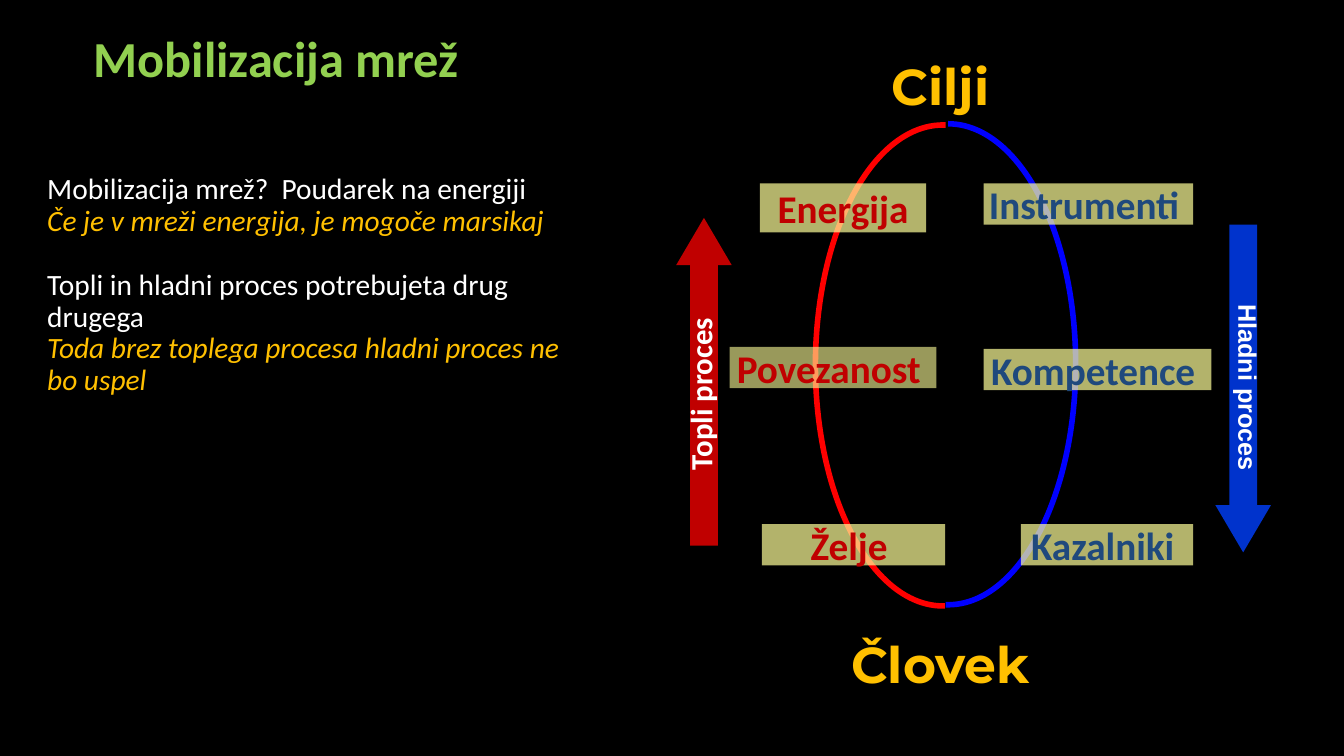
from dataclasses import dataclass

from lxml.etree import SubElement
from pptx import Presentation
from pptx.dml.color import RGBColor
from pptx.enum.shapes import MSO_SHAPE
from pptx.enum.text import MSO_ANCHOR, PP_ALIGN
from pptx.oxml.ns import qn
from pptx.shapes.autoshape import Shape
from pptx.slide import Slide
from pptx.util import Cm, Pt

COLORS = {
    "background": "000000", "title": "92D050", "white": "FFFFFF",
    "gold": "FFC000", "warm": "C00000", "cold": "1F497D",
    "warm_arc": "FF0000", "cold_arc": "0000FF",
    "cold_arrow": "0033CC", "label": "FFFF99",
}


@dataclass(frozen=True)
class Area:
    left: float
    top: float
    width: float
    height: float

    def lengths(self) -> list[Cm]:
        return [Cm(value) for value in (self.left, self.top, self.width, self.height)]


@dataclass(frozen=True)
class Arc:
    area: Area
    color: str
    angles: tuple[float, float]


@dataclass(frozen=True)
class Process:
    text: str
    arrow: Area
    arrow_rotation: int
    color: str
    caption: Area
    caption_rotation: int
    size: int
    font: str


@dataclass(frozen=True)
class Label:
    text: str
    area: Area
    color: str
    opacity: int = 70


@dataclass(frozen=True)
class Heading:
    text: str
    area: Area


@dataclass(frozen=True)
class Line:
    text: str
    color: str = "white"
    italic: bool = False
    space_before: int = 0


ARCS = [
    Arc(Area(20.68, 3.12, 6.43, 12.12), "cold_arc", (162, 54.36)),
    Arc(Area(20.55, 3.15, 6.43, 12.12), "warm_arc", (53.72, 162.38)),
]
PROCESSES = [
    Process("Topli proces", Area(17.04, 5.49, 1.4, 8.26), 180, "warm",
            Area(14.45, 9.27, 6.53, 1.32), 270, 22, "Calibri"),
    Process("Hladni proces", Area(30.63, 5.66, 1.4, 8.26), 0, "cold_arrow",
            Area(27.61, 9.32, 7.82, 0.89), 90, 18, "Arial"),
]
HEADINGS = [
    Heading("Cilji ", Area(21.39, 1.55, 4.98, 1.22)),
    Heading("Človek ", Area(21.39, 16, 4.98, 1.42)),
]
LABELS = [
    Label("Energija", Area(19.15, 4.62, 4.19, 1.24), "warm"),
    Label("Povezanost ", Area(18.39, 8.74, 5.21, 1.04), "warm", 60),
    Label("Želje ", Area(19.2, 13.21, 4.62, 1.04), "warm"),
    Label("Instrumenti ", Area(24.79, 4.62, 5.28, 1.04), "cold"),
    Label("Kompetence ", Area(24.79, 8.79, 5.74, 1.04), "cold"),
    Label("Kazalniki ", Area(25.73, 13.21, 4.34, 1.04), "cold"),
]
MESSAGES = [
    Line("Mobilizacija mrež?  Poudarek na energiji"),
    Line("Če je v mreži energija, je mogoče marsikaj", "gold", True),
    Line("Topli in hladni proces potrebujeta drug drugega", space_before=23),
    Line("Toda brez toplega procesa hladni proces ne bo uspel", "gold", True),
]


def rgb(name: str) -> RGBColor:
    return RGBColor.from_string(COLORS[name])


def write(box: Shape, text: str, *, size: float, color: str, font: str = "Calibri",
          bold: bool = True, italic: bool = False, align: PP_ALIGN = PP_ALIGN.CENTER,
          spacing: float = 1.0, space_before: int = 0, first: bool = True) -> None:
    frame = box.text_frame
    frame.word_wrap = True
    para = frame.paragraphs[0] if first else frame.add_paragraph()
    para.alignment = align
    para.line_spacing = spacing
    if space_before:
        para.space_before = Pt(space_before)
    span = para.add_run()
    span.text = text
    span.font.name = font
    span.font.size = Pt(size)
    span.font.bold = bold
    span.font.italic = italic
    span.font.color.rgb = rgb(color)


def add_text_box(page: Slide, area: Area) -> Shape:
    box = page.shapes.add_textbox(*area.lengths())
    box.text_frame.vertical_anchor = MSO_ANCHOR.TOP
    return box


def center_tightly(box: Shape) -> None:
    frame = box.text_frame
    frame.vertical_anchor = MSO_ANCHOR.MIDDLE
    frame.margin_left = frame.margin_top = frame.margin_right = frame.margin_bottom = 0


def add_filled(page: Slide, kind: MSO_SHAPE, area: Area, color: str) -> Shape:
    shape = page.shapes.add_shape(kind, *area.lengths())
    shape.shadow.inherit = False
    shape.fill.solid()
    shape.fill.fore_color.rgb = rgb(color)
    shape.line.fill.background()
    return shape


def draw_arc(page: Slide, arc: Arc) -> None:
    shape = page.shapes.add_shape(MSO_SHAPE.ARC, *arc.area.lengths())
    shape.shadow.inherit = False
    shape.adjustments[0], shape.adjustments[1] = arc.angles
    shape.fill.background()
    shape.line.color.rgb = rgb(arc.color)
    shape.line.width = Pt(4)


def draw_process(page: Slide, process: Process) -> None:
    arrow = add_filled(page, MSO_SHAPE.DOWN_ARROW, process.arrow, process.color)
    arrow.adjustments[0], arrow.adjustments[1] = 0.5, 0.85
    arrow.rotation = process.arrow_rotation
    caption = add_text_box(page, process.caption)
    caption.rotation = process.caption_rotation
    write(caption, process.text, size=process.size, color="white", font=process.font)


def draw_heading(page: Slide, heading: Heading) -> None:
    box = add_text_box(page, heading.area)
    center_tightly(box)
    write(box, heading.text, size=36, color="gold", font="Montserrat")


def draw_label(page: Slide, label: Label) -> None:
    box = add_filled(page, MSO_SHAPE.RECTANGLE, label.area, "label")
    tint = box.fill._xPr.find(qn("a:solidFill"))[0]
    SubElement(tint, qn("a:alpha")).set("val", str(label.opacity * 1000))
    center_tightly(box)
    write(box, label.text, size=28, color=label.color)


def main() -> None:
    deck = Presentation()
    deck.slide_width, deck.slide_height = Cm(33.87), Cm(19.05)
    page = deck.slides.add_slide(deck.slide_layouts[6])
    page.background.fill.solid()
    page.background.fill.fore_color.rgb = rgb("background")

    title = add_text_box(page, Area(2.11, 0.74, 13.82, 2.95))
    write(title, "Mobilizacija mrež", size=36, color="title",
          align=PP_ALIGN.LEFT, spacing=0.9)
    for arc in ARCS:
        draw_arc(page, arc)
    for process in PROCESSES:
        draw_process(page, process)
    for heading in HEADINGS:
        draw_heading(page, heading)
    for label in LABELS:
        draw_label(page, label)
    body = add_text_box(page, Area(0.94, 4.27, 13.49, 7.37))
    for index, line in enumerate(MESSAGES):
        write(body, line.text, size=21, color=line.color, bold=False,
              italic=line.italic, align=PP_ALIGN.LEFT, spacing=0.9,
              space_before=line.space_before, first=index == 0)
    deck.save("out.pptx")


if __name__ == "__main__":
    main()
